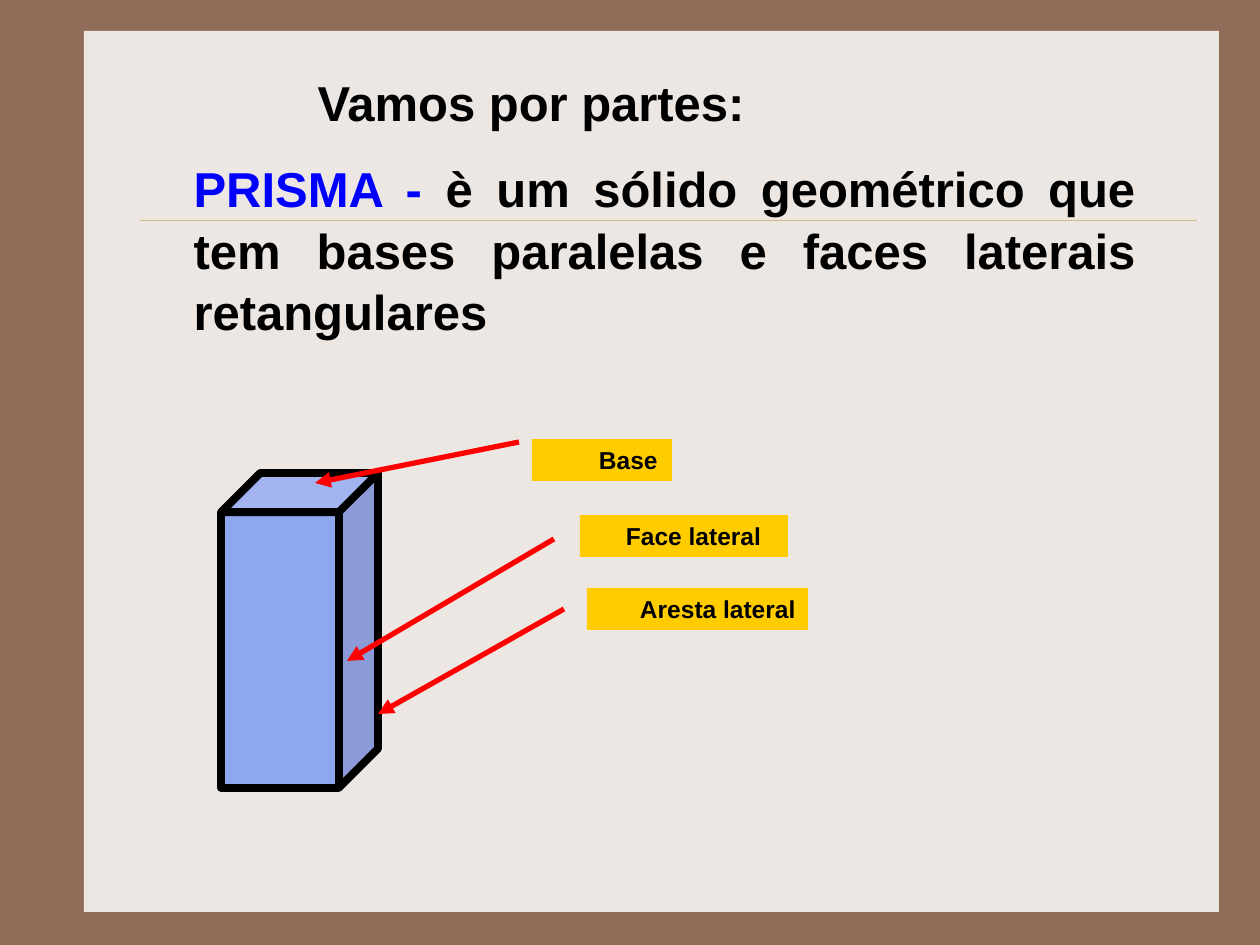
from lxml import etree
from pptx import Presentation
from pptx import util as u
from pptx.dml.color import RGBColor
from pptx.enum import shapes, text
from pptx.oxml import ns

COLORS = {
    "frame": "906D58", "panel": "EDE7E3", "rule": "CBBD83", "prism": "3366FF",
    "black": "000000", "term": "0000FF", "label": "FFCC00", "arrow": "FF0000",
}


def px(n):
    return u.Emu(round(n * 914400 / 126))


def rgb(name):
    return RGBColor.from_string(COLORS[name])


class Deck:
    font = "Arial"

    def __init__(self, width, height):
        self.prs = Presentation()
        self.prs.slide_width, self.prs.slide_height = px(width), px(height)

    def slide(self, background):
        self.s = self.prs.slides.add_slide(self.prs.slide_layouts[1])
        fill = self.s.background.fill
        fill.solid()
        fill.fore_color.rgb = rgb(background)

    def shape(self, kind, box, fill, line=None, weight=0, alpha=None):
        sp = self.s.shapes.add_shape(kind, *map(px, box))
        sp.shadow.inherit = False
        sp.fill.solid()
        sp.fill.fore_color.rgb = rgb(fill)
        if alpha:
            clr = sp.element.spPr.find(".//" + ns.qn("a:srgbClr"))
            etree.SubElement(clr, ns.qn("a:alpha"), val=str(alpha * 1000))
        if line:
            sp.line.color.rgb = rgb(line)
            sp.line.width = u.Pt(weight)
        else:
            sp.line.fill.background()
        return sp

    def line(self, start, end, color, weight, arrow=False):
        c = self.s.shapes.add_connector(
            shapes.MSO_CONNECTOR.STRAIGHT, *map(px, start + end))
        c.line.color.rgb = rgb(color)
        c.line.width = u.Pt(weight)
        spPr = c.element.spPr
        if arrow:
            etree.SubElement(spPr.find(ns.qn("a:ln")), ns.qn("a:tailEnd"), type="triangle")
        etree.SubElement(spPr, ns.qn("a:effectLst"))

    def set_text(self, tf, runs, size):
        tf.word_wrap = True
        p = tf.paragraphs[0]
        p.alignment = text.PP_ALIGN.JUSTIFY
        p.space_before = u.Pt(0)
        for words, color in runs:
            r = p.add_run()
            r.text = words
            r.font.name, r.font.size, r.font.bold = self.font, u.Pt(size), True
            r.font.color.rgb = rgb(color)
        return p

    def placeholder(self, index, box, runs):
        sp = self.s.placeholders[index]
        sp.element.getparent().append(sp.element)
        sp.left, sp.top, sp.width, sp.height = map(px, box)
        tf = sp.text_frame
        tf.auto_size = text.MSO_AUTO_SIZE.SHAPE_TO_FIT_TEXT
        tf.vertical_anchor = text.MSO_ANCHOR.TOP
        p = self.set_text(tf, runs, 28)
        p.line_spacing = 1.05
        pPr = p._p.get_or_add_pPr()
        pPr.set("marL", "0")
        pPr.set("indent", "0")
        etree.SubElement(pPr, ns.qn("a:buNone"))

    def label(self, words, box, inset):
        sp = self.shape(shapes.MSO_SHAPE.RECTANGLE, box, "label")
        tf = sp.text_frame
        tf.margin_left, tf.margin_right = px(inset), 0
        tf.vertical_anchor = text.MSO_ANCHOR.MIDDLE
        self.set_text(tf, [(words, "black")], 14)


def main():
    d = Deck(1260, 945)
    d.slide("frame")
    title, body = [ph.placeholder_format.idx for ph in d.s.placeholders]
    d.shape(shapes.MSO_SHAPE.RECTANGLE, (84, 31, 1135, 881), "panel")
    d.line((140, 220), (1197, 220), "rule", 0.25)
    prism = d.shape(shapes.MSO_SHAPE.CUBE, (221, 473, 157, 315), "prism",
                    "black", 4.5, alpha=50)
    prism.adjustments[0] = 0.25
    d.placeholder(title, (305, 63, 703, 72), [("Vamos por partes:", "black")])
    d.placeholder(body, (181, 149, 967, 189), [
        ("PRISMA - ", "term"),
        ("è um sólido geométrico que tem bases paralelas e faces laterais "
         "retangulares", "black"),
    ])
    parts = [
        ("Face lateral", (580, 515, 208, 42), 46, (554, 539), (347, 661)),
        ("Aresta lateral", (587, 588, 221, 42), 53, (564, 609), (378, 714)),
        ("Base", (532, 439, 140, 42), 67, (519, 442), (315, 483)),
    ]
    for words, box, inset, start, end in parts:
        d.line(start, end, "arrow", 3, arrow=True)
        d.label(words, box, inset)
    d.prs.save("out.pptx")


if __name__ == "__main__":
    main()
